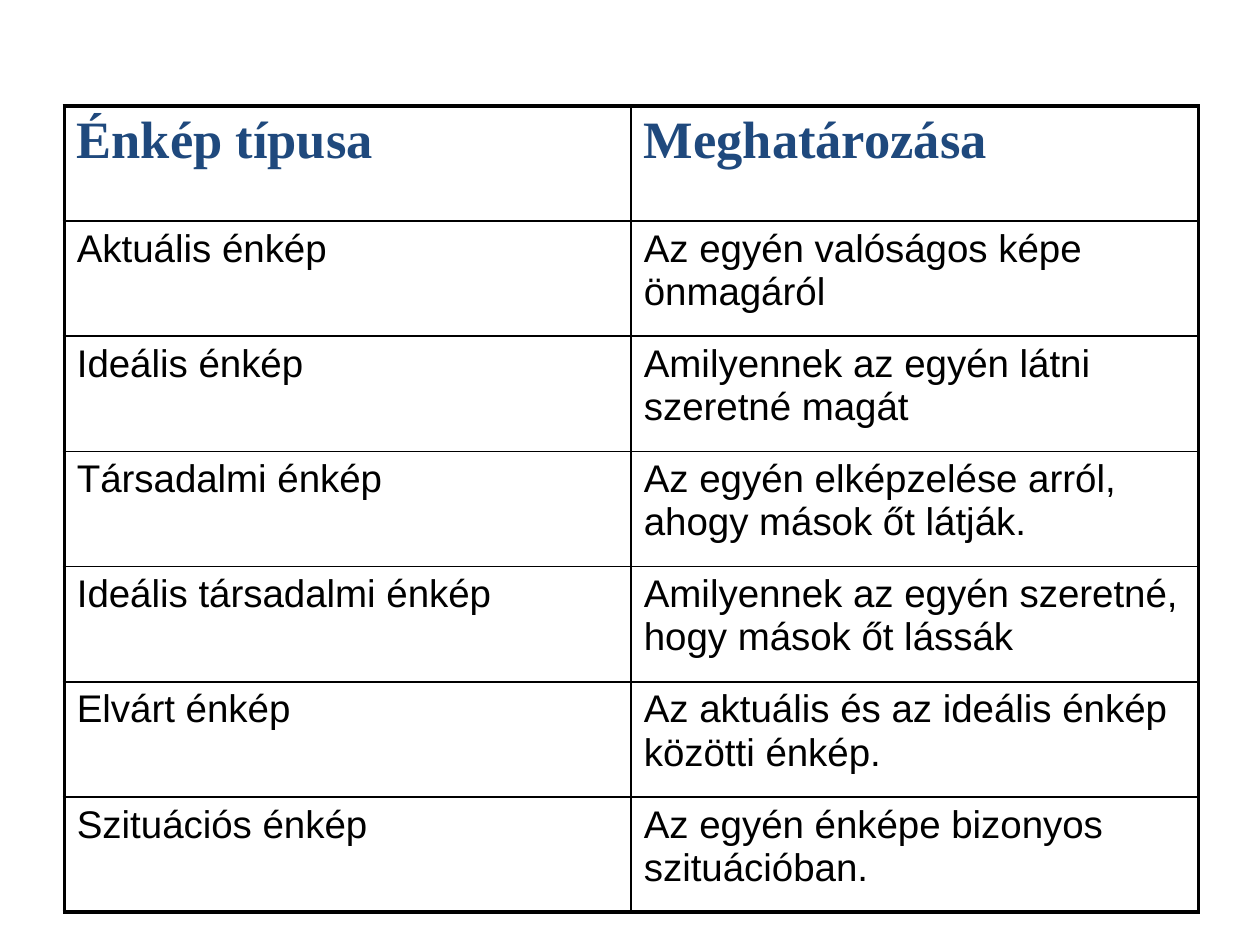
import pptx
import pptx.dml.color
import pptx.oxml.ns
import pptx.util
import lxml.etree
import dataclasses

Inches = pptx.util.Inches


@dataclasses.dataclass
class Theme:
    ink: str = "000000"
    head: str = "1F497D"
    head_font: str = "Times New Roman"
    body_font: str = "Arial"
    head_size: int = 30
    body_size: int = 22
    thin: float = 1
    thick: float = 2.25


class Deck:
    def __init__(self, theme):
        self.theme = theme
        self.file = pptx.Presentation()
        self.file.slide_width = Inches(10)
        self.file.slide_height = Inches(7.5)
        self.slide = self.file.slides.add_slide(self.file.slide_layouts[6])

    def table(self, rows, left, top, width, height):
        """Add a table with equal rows and columns and a thick frame."""
        count, span = len(rows), len(rows[0])
        grid = self.slide.shapes.add_table(
            count, span, Inches(left), Inches(top), Inches(width), Inches(height)).table
        grid.horz_banding = False
        for r, row in enumerate(rows):
            for c, words in enumerate(row):
                cell = grid.cell(r, c)
                cell.fill.background()
                self.text(cell, words, r == 0)
                self.frame(cell, {"L": c == 0, "R": c == span - 1,
                                  "T": r == 0, "B": r == count - 1})

    def text(self, cell, words, is_head):
        """Write one run, with space before of a fifth of a line."""
        look = self.theme
        para = cell.text_frame.paragraphs[0]
        space = self.node(para._p.get_or_add_pPr(), "a:spcBef")
        self.node(space, "a:spcPct", val="20000")
        run = para.add_run()
        run.text = words
        font = run.font
        font.bold = is_head
        font.name = look.head_font if is_head else look.body_font
        font.size = pptx.util.Pt(look.head_size if is_head else look.body_size)
        font.color.rgb = pptx.dml.color.RGBColor.from_string(
            look.head if is_head else look.ink)

    def frame(self, cell, sides):
        """Draw the cell borders; a true side lies on the outer edge."""
        props = cell._tc.get_or_add_tcPr()
        for place, (side, outer) in enumerate(sides.items()):
            size = self.theme.thick if outer else self.theme.thin
            line = self.node(props, "a:ln" + side, w=str(pptx.util.Pt(size)))
            fill = self.node(line, "a:solidFill")
            self.node(fill, "a:srgbClr", val=self.theme.ink)
            props.insert(place, line)  # borders come before the fill

    def node(self, owner, tag, **attrs):
        return lxml.etree.SubElement(owner, pptx.oxml.ns.qn(tag), **attrs)


def main():
    deck = Deck(Theme())

    # Types of self-image, heading row first
    rows = [
        ("Énkép típusa", "Meghatározása"),
        ("Aktuális énkép", "Az egyén valóságos képe önmagáról"),
        ("Ideális énkép", "Amilyennek az egyén látni szeretné magát"),
        ("Társadalmi énkép", "Az egyén elképzelése arról, ahogy mások őt látják."),
        ("Ideális társadalmi énkép", "Amilyennek az egyén szeretné, hogy mások őt lássák"),
        ("Elvárt énkép", "Az aktuális és az ideális énkép közötti énkép."),
        ("Szituációs énkép", "Az egyén énképe bizonyos szituációban."),
    ]
    deck.table(rows, 0.51, 0.84, 9, 6.4)

    deck.file.save("out.pptx")


if __name__ == "__main__":
    main()
